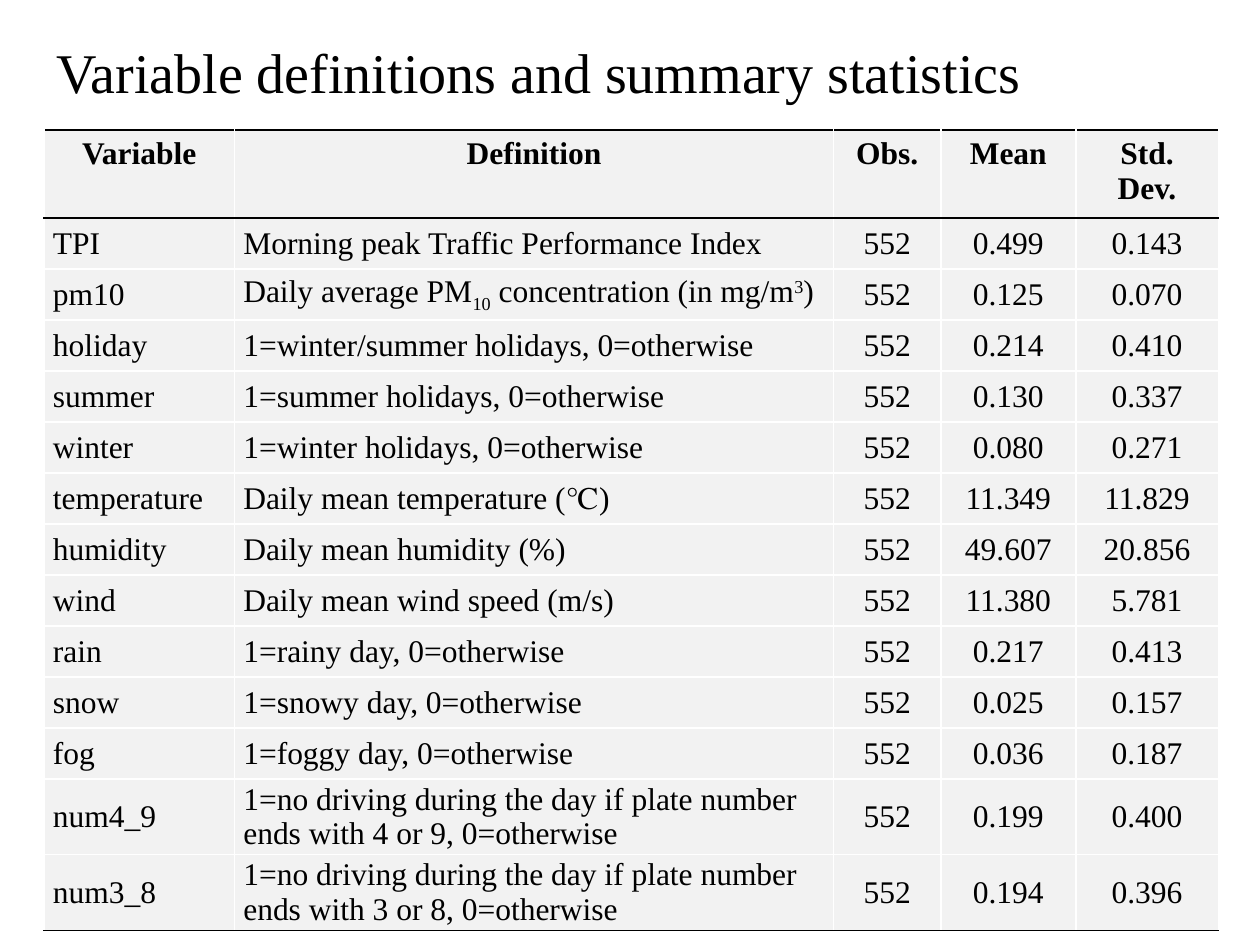
from pptx import Presentation
from pptx.dml.color import RGBColor
from pptx.enum.text import MSO_ANCHOR, PP_ALIGN
from pptx.oxml.ns import qn
from pptx.util import Inches, Pt
from lxml.etree import SubElement

BLACK = RGBColor(0x00, 0x00, 0x00)
WHITE = RGBColor(0xFF, 0xFF, 0xFF)
LIGHT_GRAY = RGBColor(0xF2, 0xF2, 0xF2)
FONT = "Times New Roman"

SLIDE_W, SLIDE_H = 10, 7.5
MARGIN, CONTENT_W = 0.35, 9.32
TITLE_BOX = (MARGIN, 0.14, CONTENT_W, 0.91)
TABLE_BOX = (MARGIN, 1.03, CONTENT_W, 5.67)
COLUMN_WEIGHTS = (1.51, 4.75, 0.85, 1.07, 1.13)
ALIGNMENTS = (PP_ALIGN.JUSTIFY, PP_ALIGN.LEFT) + (PP_ALIGN.CENTER,) * 3

HEADER = ("Variable", "Definition", "Obs.", "Mean", "Std. Dev.")
OBSERVATIONS = "552"
# A definition is one string, or (text, baseline shift in percent) pieces
PM10_DEFINITION = (("Daily average PM", 0), ("10", -25),
                   (" concentration (in mg/m", 0), ("3", 30), (")", 0))
PLATE_RULE = "1=no driving during the day if plate number ends with {}, 0=otherwise"
STATISTICS = (
    ("TPI", "Morning peak Traffic Performance Index", "0.499", "0.143"),
    ("pm10", PM10_DEFINITION, "0.125", "0.070"),
    ("holiday", "1=winter/summer holidays, 0=otherwise", "0.214", "0.410"),
    ("summer", "1=summer holidays, 0=otherwise", "0.130", "0.337"),
    ("winter", "1=winter holidays, 0=otherwise", "0.080", "0.271"),
    ("temperature", "Daily mean temperature (℃)", "11.349", "11.829"),
    ("humidity", "Daily mean humidity (%)", "49.607", "20.856"),
    ("wind", "Daily mean wind speed (m/s)", "11.380", "5.781"),
    ("rain", "1=rainy day, 0=otherwise", "0.217", "0.413"),
    ("snow", "1=snowy day, 0=otherwise", "0.025", "0.157"),
    ("fog", "1=foggy day, 0=otherwise", "0.036", "0.187"),
    ("num4_9", PLATE_RULE.format("4 or 9"), "0.199", "0.400"),
    ("num3_8", PLATE_RULE.format("3 or 8"), "0.194", "0.396"),
)


def write_text(frame, text, size=18, bold=False, align=PP_ALIGN.LEFT, spacing=None):
    """Fill a text frame with a string or with (text, baseline) pieces."""
    paragraph = frame.paragraphs[0]
    paragraph.alignment = align
    if spacing:
        paragraph.line_spacing = spacing
    pieces = ((text, 0),) if isinstance(text, str) else text
    for piece, baseline in pieces:
        run = paragraph.add_run()
        run.text = piece
        run.font.name = FONT
        run.font.size = Pt(size)
        run.font.bold = bold
        run.font.color.rgb = BLACK
        if baseline:
            run.font._element.set("baseline", str(baseline * 1000))


def style_cell(cell, top, bottom):
    """Fill the cell and rule its four sides; the sides are white."""
    properties = cell._tc.get_or_add_tcPr()
    borders = {"a:lnL": WHITE, "a:lnR": WHITE, "a:lnT": top, "a:lnB": bottom}
    for tag, color in borders.items():
        line = SubElement(properties, qn(tag), w=str(Pt(1)))
        fill = SubElement(line, qn("a:solidFill"))
        SubElement(fill, qn("a:srgbClr"), val=str(color))
    cell.fill.solid()
    cell.fill.fore_color.rgb = LIGHT_GRAY


def add_title(slide, box):
    title = slide.shapes.add_textbox(*map(Inches, box))
    title.text_frame.word_wrap = True
    title.text_frame.vertical_anchor = MSO_ANCHOR.MIDDLE
    write_text(title.text_frame, "Variable definitions and summary statistics",
               size=32, spacing=0.9)


def add_statistics_table(slide, box):
    rows = [HEADER] + [(name, definition, OBSERVATIONS, mean, deviation)
                       for name, definition, mean, deviation in STATISTICS]
    last = len(rows) - 1
    table = slide.shapes.add_table(len(rows), len(HEADER), *map(Inches, box)).table
    table.horz_banding = False

    # Column widths share the box; rows are equal and grow with wrapped text
    width, height = box[2:]
    for column, weight in zip(table.columns, COLUMN_WEIGHTS):
        column.width = Inches(width * weight / sum(COLUMN_WEIGHTS))
    for row in table.rows:
        row.height = Inches(height / len(rows))

    for r, values in enumerate(rows):
        is_header = r == 0
        # Black rules enclose the header and close the table
        top = BLACK if r <= 1 else WHITE
        bottom = BLACK if r in (0, last) else WHITE
        for c, value in enumerate(values):
            cell = table.cell(r, c)
            if not is_header:
                cell.vertical_anchor = MSO_ANCHOR.MIDDLE
                cell.margin_left = cell.margin_right = Inches(0.07)
                cell.margin_top = cell.margin_bottom = 0
            style_cell(cell, top, bottom)
            write_text(cell.text_frame, value, bold=is_header,
                       align=PP_ALIGN.CENTER if is_header else ALIGNMENTS[c])


def main():
    presentation = Presentation()
    presentation.slide_width = Inches(SLIDE_W)
    presentation.slide_height = Inches(SLIDE_H)
    slide = presentation.slides.add_slide(presentation.slide_layouts[6])
    add_title(slide, TITLE_BOX)
    add_statistics_table(slide, TABLE_BOX)
    presentation.save("out.pptx")


if __name__ == "__main__":
    main()
